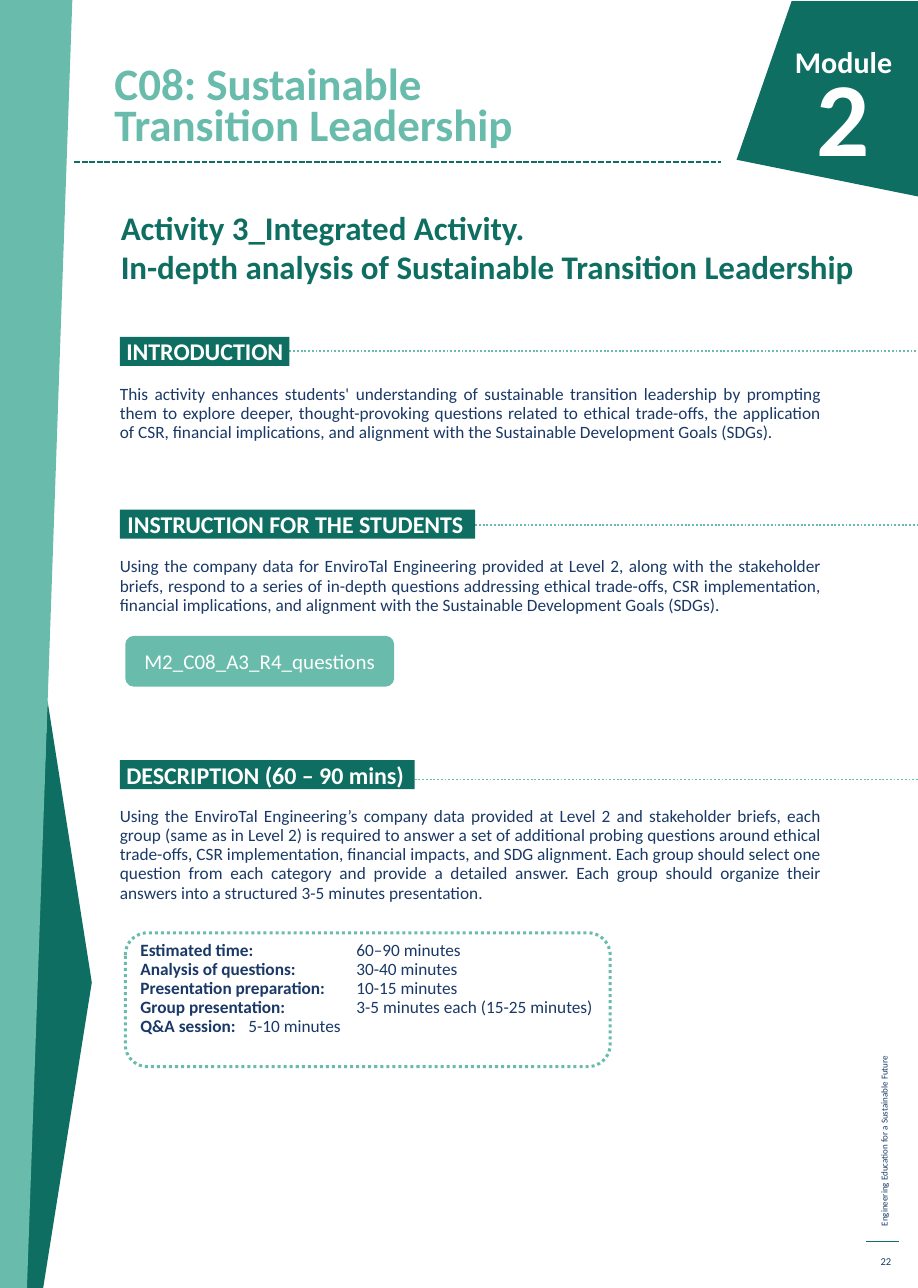
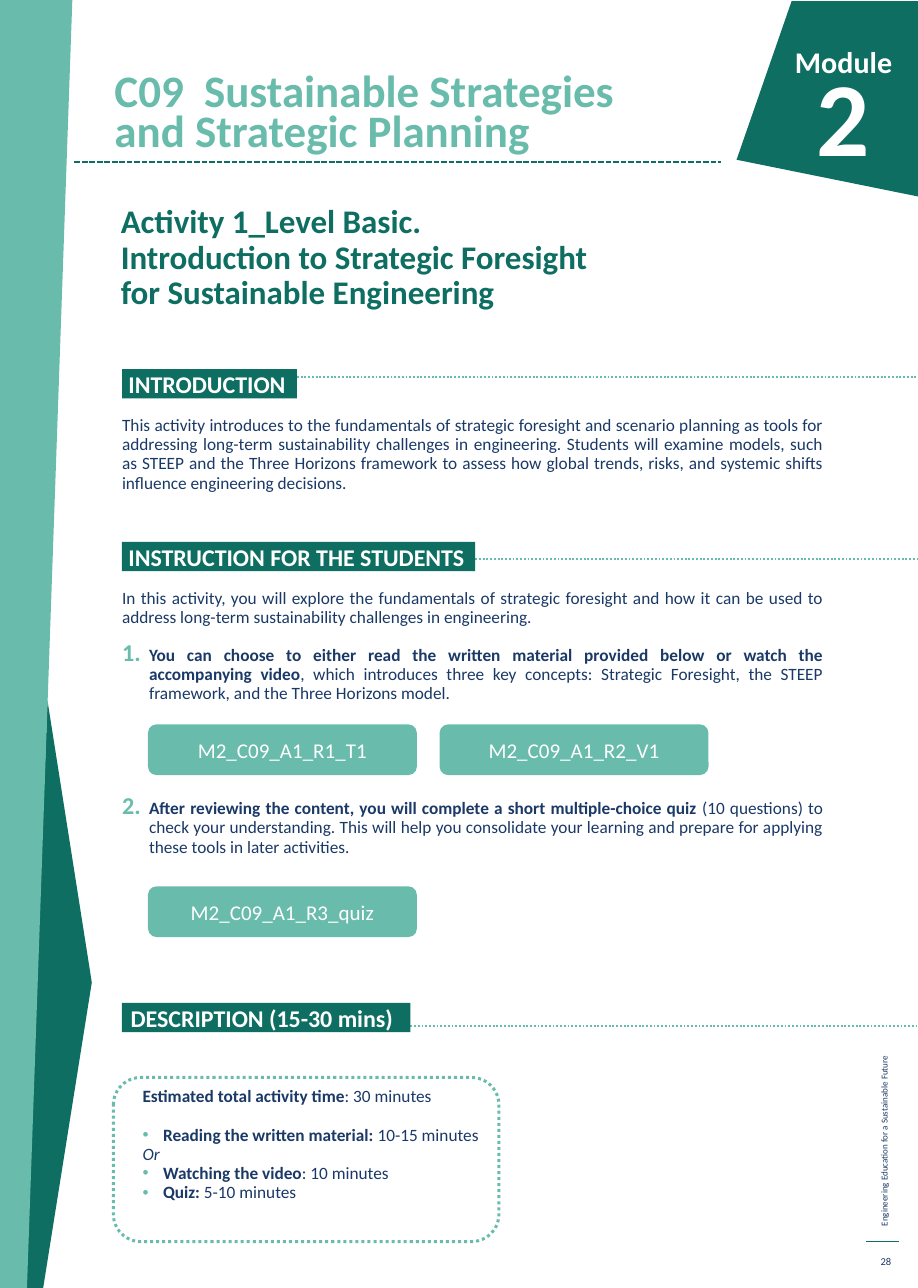
from lxml import etree
from pptx import Presentation
from pptx.dml.color import RGBColor
from pptx.enum.dml import MSO_LINE as DASH
from pptx.enum.shapes import MSO_CONNECTOR as CONN, MSO_SHAPE as SHAPE
from pptx.enum.text import MSO_ANCHOR as ANCHOR, MSO_AUTO_SIZE as FIT, PP_ALIGN as ALIGN
from pptx.oxml.ns import qn
from pptx.util import Inches, Pt

COLORS = {"dark": "0E6E61", "light": "69BCAC", "navy": "1A3966", "white": "FFFFFF"}
FONT = "Calibri"
SLIDE_W, SLIDE_H = 8.5, 11.93
LINE_PT = 12.8
NO_INSET = (0, 0, 0, 0)
INSET = (0.1, 0.05, 0.1, 0.05)
BODY = {"size": 11.5, "color": "navy"}
JUSTIFIED = {"alignment": ALIGN.JUSTIFY, "line_spacing": Pt(LINE_PT)}
LEFT = {"alignment": ALIGN.LEFT, "line_spacing": Pt(LINE_PT)}


def rgb(name):
    return RGBColor.from_string(COLORS[name])


def apply(obj, fmt):
    for name, value in fmt.items():
        setattr(obj, name, value)


def add_runs(p, runs, size, color, bold=False):
    if isinstance(runs, str):
        runs = [(runs, {})]
    for text, extra in runs:
        r = p.add_run()
        r.text = text
        apply(r.font, {"name": FONT, "size": Pt(size), "bold": bold, **extra})
        r.font.color.rgb = rgb(color)


def set_frame(tf, inset=INSET, anchor=ANCHOR.TOP):
    sides = ("margin_left", "margin_top", "margin_right", "margin_bottom")
    apply(tf, {"word_wrap": True, "auto_size": FIT.NONE, "vertical_anchor": anchor})
    apply(tf, {side: Inches(v) for side, v in zip(sides, inset)})


def write(tf, paragraphs, font, fmt):
    for i, runs in enumerate(paragraphs):
        p = tf.paragraphs[0] if i == 0 else tf.add_paragraph()
        apply(p, fmt)
        add_runs(p, runs, **font)


def add_text(s, box, paragraphs, font, fmt, inset=INSET, anchor=ANCHOR.TOP):
    sp = s.shapes.add_textbox(*map(Inches, box))
    set_frame(sp.text_frame, inset, anchor)
    write(sp.text_frame, paragraphs, font, fmt)
    return sp


def add_box(s, kind, box, fill=None):
    sp = s.shapes.add_shape(kind, *map(Inches, box))
    sp.shadow.inherit = False
    sp.line.fill.background()
    if fill:
        sp.fill.solid()
        sp.fill.fore_color.rgb = rgb(fill)
    else:
        sp.fill.background()
    return sp


def add_line(s, start, end, color, width, dash=None):
    cn = s.shapes.add_connector(CONN.STRAIGHT, *map(Inches, start + end))
    cn.line.color.rgb = rgb(color)
    apply(cn.line, {"width": Pt(width), "dash_style": dash})
    etree.SubElement(cn._element.spPr, qn("a:effectLst"))


def add_polygon(s, points, fill):
    pts = [(Inches(x), Inches(y)) for x, y in points]
    fb = s.shapes.build_freeform(*pts[0], scale=1.0)
    fb.add_line_segments(pts[1:], close=True)
    sp = fb.convert_to_shape()
    sp.shadow.inherit = False
    sp.fill.solid()
    sp.fill.fore_color.rgb = rgb(fill)
    sp.line.fill.background()


def set_bullet(p, hang, left, number=None):
    ppr = p._p.get_or_add_pPr()
    ppr.set("marL", str(Inches(left)))
    ppr.set("indent", str(-Inches(hang)))
    clr = etree.SubElement(ppr, qn("a:buClr"))
    etree.SubElement(clr, qn("a:srgbClr"), val=COLORS["light"])
    if number:
        etree.SubElement(ppr, qn("a:buSzPct"), val="140000")
        etree.SubElement(ppr, qn("a:buFont"), typeface=FONT)
        etree.SubElement(ppr, qn("a:buAutoNum"), type="arabicPeriod", startAt=str(number))
    else:
        etree.SubElement(ppr, qn("a:buFont"), typeface="Arial")
        etree.SubElement(ppr, qn("a:buChar"), char="•")


def set_tabs(p, stops):
    tabs = etree.SubElement(p._p.get_or_add_pPr(), qn("a:tabLst"))
    for stop in stops:
        etree.SubElement(tabs, qn("a:tab"), pos=str(Inches(stop)), algn="l")


def add_sidebar(s):
    add_polygon(s, [(0.45, 5.17 + 1.3), (0.44, 6.48), (0.25, SLIDE_H), (0.41, SLIDE_H),
                    (0.85, 9.1), (0.83, 8.97), (0.44, 6.48)][:0]
                or [(0.44, 6.49), (0.85, 9.1), (0.4, SLIDE_H), (0.23, SLIDE_H)], "dark")
    add_polygon(s, [(0, 0), (0.67, 0), (0.25, SLIDE_H), (0, SLIDE_H)], "light")


def add_footer(s, number):
    sp = add_text(s, (5.94, 9.11, 4.49, 0.2), ["Engineering Education for a Sustainable Future"],
                  {"size": 6, "color": "navy"}, {})
    sp.rotation = 270
    add_line(s, (8.02, 11.5), (8.32, 11.5), "dark", 0.75)
    add_text(s, (8.02, 11.54, 0.33, 0.29), [number], {"size": 7, "color": "navy"},
             {"alignment": ALIGN.RIGHT}, anchor=ANCHOR.MIDDLE)


def add_module_badge(s, number):
    add_polygon(s, [(SLIDE_W, 0.01), (7.33, 0.01), (6.82, 1.48), (SLIDE_W, 1.82)], "dark")
    for box, text, size in (((6.56, 0.35, 1.8, 1.42), "Module", 20),
                            ((6.35, 0.43, 1.8, 1.42), number, 70)):
        add_text(s, box, [text], {"size": size, "color": "white", "bold": True},
                 {"alignment": ALIGN.RIGHT})


def new_page(prs, title, title_top, number):
    s = prs.slides.add_slide(prs.slide_layouts[5])
    add_footer(s, number)
    add_sidebar(s)
    add_module_badge(s, "2")
    add_line(s, (0.69, 1.5), (6.68, 1.5), "dark", 1.25, DASH.SQUARE_DOT)
    sp = s.shapes.title
    apply(sp, dict(zip(("left", "top", "width", "height"),
                       map(Inches, (0.96, title_top, 5.36, 1.05)))))
    tf = sp.text_frame
    set_frame(tf, anchor=ANCHOR.BOTTOM)
    p = tf.paragraphs[0]
    apply(p, {"alignment": ALIGN.LEFT, "line_spacing": Pt(26.8)})
    for i, line in enumerate(title):
        if i:
            p.add_line_break()
        add_runs(p, line, 30, "light", True)
    return s


def add_activity(s, box, lines, spacing):
    add_text(s, box, lines, {"size": 22, "color": "dark", "bold": True},
             {"line_spacing": spacing})


def add_heading(s, box, text, rule_y, inset=0.06):
    x, y, w, h = box
    add_line(s, (x + w, rule_y), (SLIDE_W, rule_y), "light", 1.25, DASH.ROUND_DOT)
    sp = add_box(s, SHAPE.RECTANGLE, box, "dark")
    set_frame(sp.text_frame, (inset, 0, 0, 0), ANCHOR.MIDDLE)
    write(sp.text_frame, [text], {"size": 16, "color": "white", "bold": True},
          {"alignment": ALIGN.LEFT})


def add_body(s, x, y, lines, runs, number=None):
    sp = add_text(s, (x, y, 6.49, lines * LINE_PT / 72), [runs], BODY, JUSTIFIED, NO_INSET)
    if number:
        set_bullet(sp.text_frame.paragraphs[0], 0.25, 0.25, number)


def add_button(s, x, y, text):
    sp = add_box(s, SHAPE.ROUNDED_RECTANGLE, (x, y, 2.49, 0.47), "light")
    set_frame(sp.text_frame, anchor=ANCHOR.MIDDLE)
    write(sp.text_frame, [text], {"size": 14, "color": "white"}, {"alignment": ALIGN.CENTER})


def add_timing(s, box, text_x, text_y, rows):
    x, y, w, h = box
    sp = add_box(s, SHAPE.ROUNDED_RECTANGLE, box)
    sp.line.color.rgb = rgb("light")
    apply(sp.line, {"width": Pt(2), "dash_style": DASH.ROUND_DOT})
    sp = add_text(s, (text_x, text_y, x + w - text_x, y + h - text_y), rows, BODY,
                  LEFT, NO_INSET)
    return sp.text_frame.paragraphs


def bold(text):
    return text, {"bold": True}


def plain(text):
    return text, {}


def build_leadership(prs):
    s = new_page(prs, ["C08: Sustainable", "Transition Leadership"], 0.39, "22")
    x = 1.11
    add_activity(s, (1.02, 1.87, 7.13, 1.05),
                 ["Activity 3_Integrated Activity.",
                  "In-depth analysis of Sustainable Transition Leadership"], 1.0)
    add_heading(s, (x, 3.12, 1.57, 0.27), "INTRODUCTION", 3.25)
    add_body(s, x, 3.56, 3, "This activity enhances students' understanding of sustainable transition leadership by prompting them to explore deeper, thought-provoking questions related to ethical trade-offs, the application of CSR, financial implications, and alignment with the Sustainable Development Goals (SDGs).")
    add_heading(s, (x, 4.72, 3.29, 0.27), "INSTRUCTION FOR THE STUDENTS", 4.86, 0.07)
    add_body(s, x, 5.16, 3, "Using the company data for EnviroTal Engineering provided at Level 2, along with the stakeholder briefs, respond to a series of in-depth questions addressing ethical trade-offs, CSR implementation, financial implications, and alignment with the Sustainable Development Goals (SDGs).")
    add_button(s, 1.16, 5.89, "M2_C08_A3_R4_questions")
    add_heading(s, (x, 7.04, 2.73, 0.27), "DESCRIPTION (60 – 90 mins)", 7.22)
    add_body(s, x, 7.47, 5, "Using the EnviroTal Engineering’s company data provided at Level 2 and stakeholder briefs, each group (same as in Level 2) is required to answer a set of additional probing questions around ethical trade-offs, CSR implementation, financial impacts, and SDG alignment. Each group should select one question from each category and provide a detailed answer. Each group should organize their answers into a structured 3-5 minutes presentation.")
    rows = [("Estimated time:", "60–90 minutes"),
            ("Analysis of questions:", "30-40 minutes"),
            ("Presentation preparation:", "10-15 minutes"),
            ("Group presentation:", "3-5 minutes each (15-25 minutes)"),
            ("Q&A session:", "5-10 minutes")]
    for p in add_timing(s, (1.16, 8.64, 4.49, 1.24), 1.3, 8.71,
                        [[bold(label), plain("\t" + time)] for label, time in rows]):
        set_tabs(p, (1, 2))


def build_strategies(prs):
    s = new_page(prs, ["C09  Sustainable Strategies", "and Strategic Planning"], 0.45, "28")
    x = 1.13
    add_activity(s, (1.02, 1.85, 6.89, 1.05),
                 ["Activity 1_Level Basic.", "Introduction to Strategic Foresight",
                  "for Sustainable Engineering"], 0.9)
    add_heading(s, (x, 3.42, 1.62, 0.27), "INTRODUCTION", 3.49)
    add_body(s, x, 3.85, 4, "This activity introduces to the fundamentals of strategic foresight and scenario planning as tools for addressing long-term sustainability challenges in engineering. Students will examine models, such as STEEP and the Three Horizons framework to assess how global trends, risks, and systemic shifts influence engineering decisions.")
    add_heading(s, (x, 5.02, 3.27, 0.27), "INSTRUCTION FOR THE STUDENTS", 5.18)
    add_body(s, x, 5.45, 2, "In this activity, you will explore the fundamentals of strategic foresight and how it can be used to address long-term sustainability challenges in engineering.")
    add_body(s, x, 5.98, 3, [
        bold("You can choose to either read the written material provided below or watch the accompanying video"),
        plain(", which introduces three key concepts: Strategic Foresight, the STEEP framework, and the Three Horizons model.")], 1)
    add_button(s, 1.37, 6.71, "M2_C09_A1_R1_T1")
    add_button(s, 4.07, 6.71, "M2_C09_A1_R2_V1")
    add_body(s, x, 7.4, 3, [
        bold("After reviewing the content, you will complete a short multiple-choice quiz "),
        plain("(10 questions) to check your understanding. This will help you consolidate your learning and prepare for applying these tools in later activities.")], 2)
    add_button(s, 1.37, 8.21, "M2_C09_A1_R3_quiz")
    add_heading(s, (x, 9.29, 2.67, 0.27), "DESCRIPTION (15-30 mins)", 9.5, 0.08)
    rows = [[bold("Estimated total activity time"), plain(": 30 minutes")],
            [bold("Reading the written material: "), plain("10-15 minutes")],
            [("Or", {"italic": True})],
            [bold("Watching the video"), plain(": 10 minutes")],
            [bold("Quiz: "), plain("5-10 minutes")]]
    pars = add_timing(s, (1.05, 9.98, 3.57, 1.52), 1.32, 10.07, rows)
    pars[1].space_before = Pt(LINE_PT)
    for i in (1, 3, 4):
        set_bullet(pars[i], 0.19, 0.19)


def main():
    prs = Presentation()
    prs.slide_width, prs.slide_height = Inches(SLIDE_W), Inches(SLIDE_H)
    build_leadership(prs)
    build_strategies(prs)
    prs.save("out.pptx")


if __name__ == "__main__":
    main()
